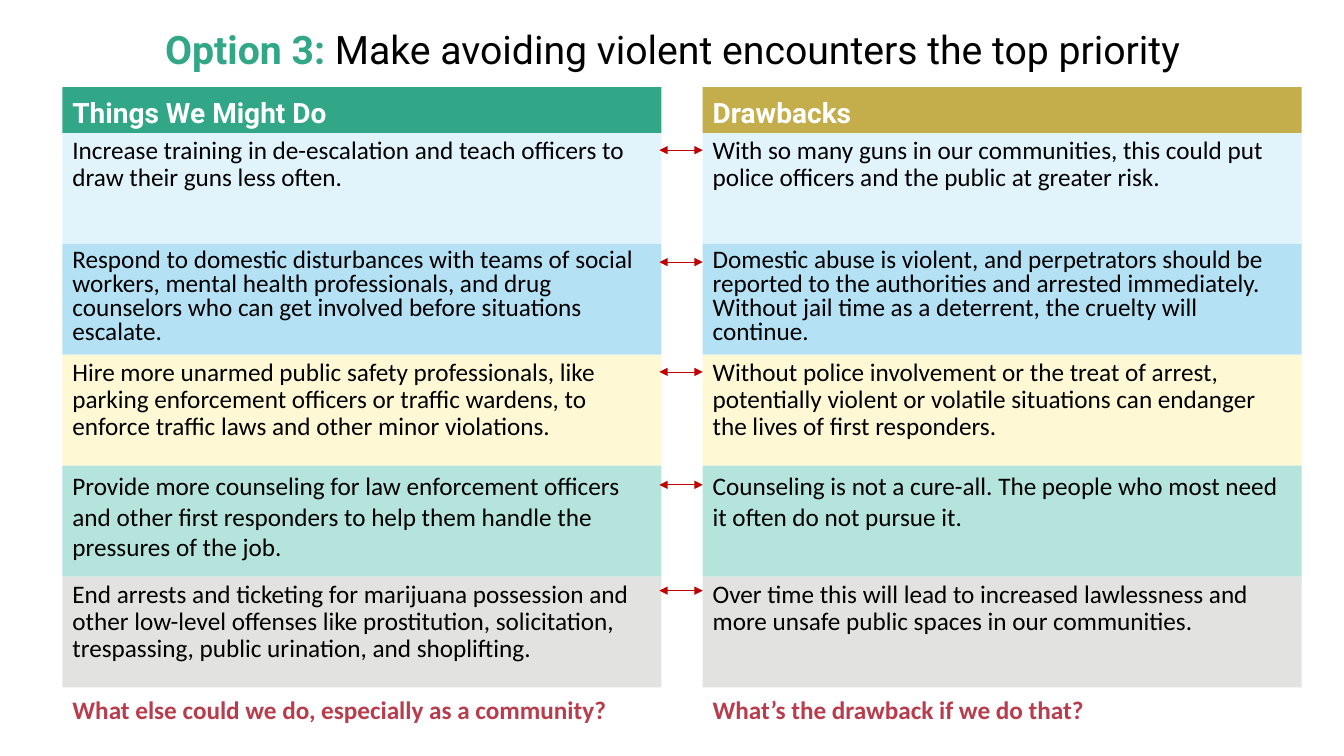
import pptx
import pptx.util
import pptx.dml.color
import pptx.enum.shapes
import pptx.enum.text
import pptx.oxml
from lxml import etree

Inches, Pt = pptx.util.Inches, pptx.util.Pt
ANCHOR = pptx.enum.text.MSO_ANCHOR
ALIGN = pptx.enum.text.PP_ALIGN

# Grid: two columns, five equal rows below the headers
COLUMNS, COL_W = (0.62, 6.97), 5.94
HEADER_TOP, HEADER_H = 0.865, 0.46
ROWS_TOP, ROW_H = 1.32, 1.1
QUESTION_TOP, QUESTION_H = 6.84, 0.4

HEADERS = [("Things We Might Do", "31A787"), ("Drawbacks", "C4AE4C")]
QUESTIONS = ["What else could we do, especially as a community?",
             "What’s the drawback if we do that?"]

# Fill, line spacing, arrow height, action, drawback
ROWS = [
    ("E1F3FB", 0.9, 1.49,
     "Increase training in de-escalation and teach officers to draw their guns less often.",
     "With so many guns in our communities, this could put police officers and the public "
     "at greater risk."),
    ("B5E1F5", 0.8, 2.6,
     "Respond to domestic disturbances with teams of social workers, mental health "
     "professionals, and drug counselors who can get involved before situations escalate.",
     "Domestic abuse is violent, and perpetrators should be reported to the authorities and "
     "arrested immediately. Without jail time as a deterrent, the cruelty will continue."),
    ("FEF8D4", 0.9, 3.69,
     "Hire more unarmed public safety professionals, like parking enforcement officers or "
     "traffic wardens, to enforce traffic laws and other minor violations.",
     "Without police involvement or the treat of arrest, potentially violent or volatile "
     "situations can endanger the lives of first responders."),
    ("B4E4DC", 1.0, 4.81,
     "Provide more counseling for law enforcement officers and other first responders to "
     "help them handle the pressures of the job.",
     "Counseling is not a cure-all. The people who most need it often do not pursue it."),
    ("E2E2E0", 0.9, 5.86,
     "End arrests and ticketing for marijuana possession and other low-level offenses like "
     "prostitution, solicitation, trespassing, public urination, and shoplifting.",
     "Over time this will lead to increased lawlessness and more unsafe public spaces in "
     "our communities."),
]


def rgb(value):
    return pptx.dml.color.RGBColor.from_string(value)


def set_font(font, size, name, color, bold=False):
    font.size, font.name, font.bold = Pt(size), name, bold
    font.color.rgb = rgb(color)


def add_box(s, box, fill=None, anchor=ANCHOR.TOP):
    """Add a filled rectangle or a text box; return its first paragraph."""
    place = [Inches(v) for v in box]
    if fill:
        sp = s.shapes.add_shape(pptx.enum.shapes.MSO_SHAPE.RECTANGLE, *place)
        sp.shadow.inherit = False
        sp.fill.solid()
        sp.fill.fore_color.rgb = rgb(fill)
        sp.line.fill.background()
    else:
        sp = s.shapes.add_textbox(*place)
    tf = sp.text_frame
    tf.word_wrap = True
    tf.vertical_anchor = anchor
    p = tf.paragraphs[0]
    p.alignment = ALIGN.LEFT
    return p


def add_title(s, box):
    p = add_box(s, box, anchor=ANCHOR.MIDDLE)
    p.alignment, p.line_spacing = ALIGN.CENTER, 0.9
    for text, color, bold in (("Option 3: ", "31A787", True),
                              ("Make avoiding violent encounters the top priority",
                               "000000", False)):
        r = p.add_run()
        r.text = text
        set_font(r.font, 28, "Roboto", color, bold)


def add_column(s, left, header, texts, question):
    # Header
    title, color = header
    p = add_box(s, (left, HEADER_TOP, COL_W, HEADER_H), color, ANCHOR.BOTTOM)
    p.text, p.line_spacing = title, 0.8
    set_font(p.font, 20, "Roboto", "FFFFFF", True)

    # Rows
    for i, (text, (fill, spacing, *_)) in enumerate(zip(texts, ROWS)):
        p = add_box(s, (left, ROWS_TOP + i * ROW_H, COL_W, ROW_H), fill)
        p.text, p.line_spacing = text, spacing
        set_font(p.font, 18, "Calibri", "000000")

    # Closing question
    p = add_box(s, (left, QUESTION_TOP, COL_W, QUESTION_H))
    p.text = question
    set_font(p.font, 18, "Calibri", "B93C4C", True)


def add_arrow(s, x1, x2, y):
    c = s.shapes.add_connector(pptx.enum.shapes.MSO_CONNECTOR.STRAIGHT,
                               Inches(x1), Inches(y), Inches(x2), Inches(y))
    c.line.color.rgb = rgb("C00000")
    c.line.width = Pt(0.5)
    ln = c.line._get_or_add_ln()
    for end in ("a:headEnd", "a:tailEnd"):
        etree.SubElement(ln, pptx.oxml.ns.qn(end), type="triangle")
    etree.SubElement(c._element.spPr, pptx.oxml.ns.qn("a:effectLst"))


def main():
    prs = pptx.Presentation()
    prs.slide_width, prs.slide_height = Inches(13.33), Inches(7.5)
    s = prs.slides.add_slide(prs.slide_layouts[6])

    add_title(s, (0.92, 0.16, 11.5, 0.7))
    actions, drawbacks = zip(*(row[3:] for row in ROWS))
    for column in zip(COLUMNS, HEADERS, (actions, drawbacks), QUESTIONS):
        add_column(s, *column)

    # Arrows across the gap between the columns
    for row in ROWS:
        add_arrow(s, COLUMNS[0] + COL_W - 0.02, COLUMNS[1], row[2])
    prs.save("out.pptx")


if __name__ == "__main__":
    main()
